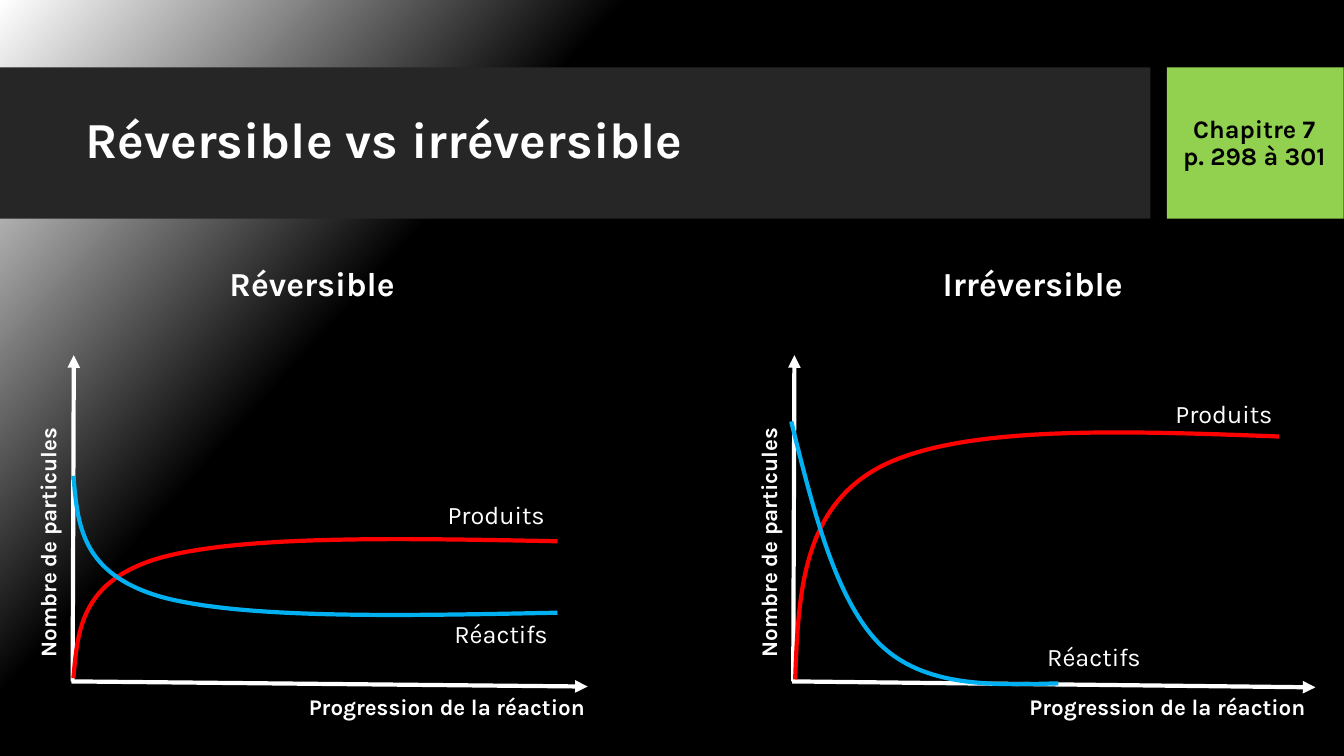
from lxml import etree
from pptx import Presentation
from pptx.dml.color import RGBColor
from pptx.enum.shapes import MSO_CONNECTOR as Link, MSO_SHAPE as Form
from pptx.enum.text import MSO_ANCHOR as Anchor, MSO_AUTO_SIZE as Auto, PP_ALIGN as Align
from pptx.oxml.ns import qn
from pptx.util import Cm, Pt

COLORS = {"white": "FFFFFF", "black": "000000", "band": "262626",
          "green": "92D050", "red": "FF0000", "blue": "00B0F0"}
SHIFT = 18.16  # distance between the two graphs


def tint(name):
    return RGBColor.from_string(COLORS[name])


def write(shape, text, size=16, bold=True, color="white", align=Align.LEFT,
          anchor=Anchor.TOP, spacing=1.0):
    frame = shape.text_frame
    frame.text = text
    frame.word_wrap = True
    frame.auto_size = Auto.NONE
    frame.vertical_anchor = anchor
    for para in frame.paragraphs:
        para.alignment = align
        para.line_spacing = spacing
        para.space_before = Pt(0)
        para.font.name = "Karla"
        para.font.size = Pt(size)
        para.font.bold = bold
        para.font.color.rgb = tint(color)


deck = Presentation()
deck.slide_width, deck.slide_height = Cm(33.87), Cm(19.05)
layout = deck.slide_layouts[4]
slide = deck.slides.add_slide(layout)
shapes = slide.shapes

# Background: white corner fading to black
back = slide.background.fill
back.gradient()
back.gradient_angle = 318
for stop, (place, color) in zip(back.gradient_stops, [(0, "white"), (0.31, "black")]):
    stop.position = place
    stop.color.rgb = tint(color)

# The two bands belong to the layout, behind its placeholders
bottom = layout.placeholders[0].element
bands = [(101, 0, 28.99, "band"), (102, 29.41, 4.45, "green")]
for number, left, width, color in bands:
    band = shapes.add_shape(Form.RECTANGLE, Cm(left), Cm(1.7), Cm(width), Cm(3.81))
    band.shadow.inherit = False
    band.fill.solid()
    band.fill.fore_color.rgb = tint(color)
    band.line.fill.background()
    band.element.nvSpPr.cNvPr.set("id", str(number))
    bottom.addprevious(band.element)

title = shapes.title
title.left, title.top, title.width, title.height = Cm(1.89), Cm(2.08), Cm(26.7), Cm(3)
write(title, "Réversible vs irréversible", size=36, anchor=Anchor.MIDDLE, spacing=0.9)

pages = shapes.add_textbox(Cm(29.36), Cm(1.7), Cm(4.5), Cm(3.84))
write(pages, "Chapitre 7\np. 298 à 301", size=18, color="black",
      align=Align.CENTER, anchor=Anchor.MIDDLE, spacing=0.9)

# The two graphs; x is measured from each graph's own left edge
graphs = [
    {"head": "Réversible", "slot": 1, "tip": (14.81, 17.3),
     "curves": [
         ("red", [(1.85, 17.09), (1.96, 15.88), (2.03, 14.63), (4.06, 14.05),
                  (6.12, 13.49), (10.08, 13.56), (14.05, 13.64)]),
         ("blue", [(1.85, 11.99), (1.96, 13.21), (2.03, 14.45), (4.06, 15.04),
                   (6.12, 15.6), (10.08, 15.52), (14.05, 15.44)])],
     "labels": [("Produits", 11.03, 12.45), ("Réactifs", 11.2, 15.45)]},
    {"head": "Irréversible", "slot": 3, "tip": (14.99, 17.32),
     "curves": [
         ("red", [(1.88, 17.12), (1.96, 14.94), (2.06, 12.75), (4.09, 11.73),
                  (6.12, 10.72), (10.11, 10.85), (14.07, 11)]),
         ("blue", [(1.78, 10.62), (2.34, 12.88), (2.9, 15.11), (4.01, 16.23),
                   (5.13, 17.32), (6.81, 17.27), (8.51, 17.22)])],
     "labels": [("Produits", 11.21, 9.9), ("Réactifs", 7.98, 16.04)]},
]
holders = {item.placeholder_format.idx: item for item in slide.placeholders}

for index, graph in enumerate(graphs):
    shift = index * SHIFT

    head = holders[graph["slot"]]
    head.left, head.top = Cm(0.73 + shift), Cm(6.22)
    head.width, head.height = Cm(14.27), Cm(1.93)
    write(head, graph["head"], size=24, align=Align.CENTER,
          anchor=Anchor.MIDDLE, spacing=0.9)

    parts = shapes.add_group_shape().shapes
    for start, tip in [((1.83, 17.17), (1.86, 8.95)), ((1.8, 17.17), graph["tip"])]:
        axis = parts.add_connector(Link.STRAIGHT, Cm(start[0] + shift), Cm(start[1]),
                                   Cm(tip[0] + shift), Cm(tip[1]))
        axis.line.color.rgb = tint("white")
        axis.line.width = Pt(3)
        line = axis.element.spPr.find(qn("a:ln"))
        etree.SubElement(line, qn("a:tailEnd"), type="triangle")
        etree.SubElement(axis.element.spPr, qn("a:effectLst"))

    side = parts.add_textbox(Cm(shift - 2.44), Cm(12.69), Cm(7.29), Cm(0.94))
    side.rotation = 270
    write(side, "Nombre de particules")
    base = parts.add_textbox(Cm(7.12 + shift), Cm(17.33), Cm(7.87), Cm(0.94))
    write(base, "Progression de la réaction", align=Align.RIGHT)

    for color, knots in graph["curves"]:
        points = [(Cm(x + shift), Cm(y)) for x, y in knots]
        pen = parts.build_freeform(*points[0])
        pen.add_line_segments(points[3::3], close=False)
        curve = pen.convert_to_shape()
        # Bend each straight section with its two control points
        for step, part in enumerate(list(curve.element.iter(qn("a:lnTo")))):
            bend = etree.Element(qn("a:cubicBezTo"))
            for x, y in points[3 * step + 1:3 * step + 4]:
                etree.SubElement(bend, qn("a:pt"), x=str(x - curve.left), y=str(y - curve.top))
            part.getparent().replace(part, bend)
        curve.shadow.inherit = False
        curve.fill.background()
        curve.line.color.rgb = tint(color)
        curve.line.width = Pt(3)

    for text, left, top in graph["labels"]:
        label = parts.add_textbox(Cm(left + shift), Cm(top), Cm(3.02), Cm(1.02))
        write(label, text, size=18, bold=False)

for slot in (2, 4):
    spare = holders[slot].element
    spare.getparent().remove(spare)

deck.save("out.pptx")
